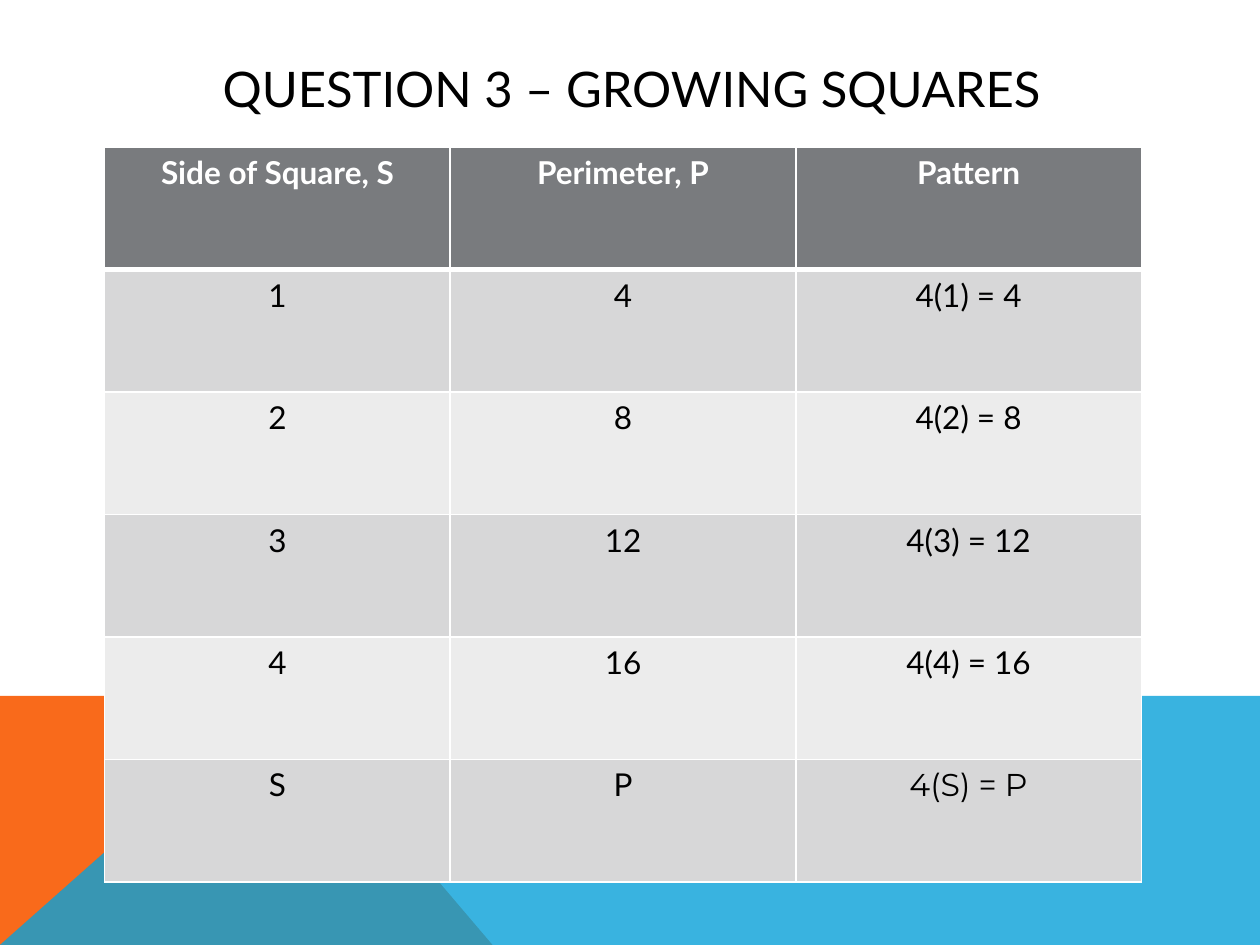
from lxml import etree
from pptx import Presentation
from pptx.dml.color import RGBColor
from pptx.enum.text import MSO_ANCHOR, PP_ALIGN
from pptx.oxml.ns import qn
from pptx.util import Cm, Pt

CENTER = PP_ALIGN.CENTER
MIDDLE = MSO_ANCHOR.MIDDLE

WHITE = RGBColor(0xFF, 0xFF, 0xFF)
BLACK = RGBColor(0x00, 0x00, 0x00)
ORANGE = RGBColor(0xF9, 0x6A, 0x1B)
BLUE = RGBColor(0x08, 0xA1, 0xD9)
HEADER_GRAY = RGBColor(0x79, 0x7B, 0x7E)
BAND_GRAYS = (RGBColor(0xD7, 0xD7, 0xD8), RGBColor(0xEC, 0xEC, 0xEC))

TITLE_FORMAT = {"name": "Lato", "size": Pt(28), "bold": False}
HEADER_FORMAT = {"name": "Lato", "size": Pt(18), "bold": True}
BODY_FORMAT = {"name": "Lato", "size": Pt(18), "bold": False}
FORMULA_FORMAT = {**BODY_FORMAT, "name": "Montserrat"}

HEADINGS = ("Side of Square, S", "Perimeter, P", "Pattern")
SQUARES = [(str(side), str(4 * side), f"4({side}) = {4 * side}") for side in range(1, 5)]
ROWS = [HEADINGS, *SQUARES, ("S", "P", "4(S) = P")]


def write_text(frame, text, formats, color):
    """Write one centred paragraph with the given font values."""
    para = frame.paragraphs[0]
    para.alignment = CENTER
    span = para.add_run()
    span.text = text
    for name, value in formats.items():
        setattr(span.font, name, value)
    span.font.color.rgb = color


def add_polygon(page, left, top, points, color, opacity=100):
    """Draw a filled polygon from points in cm relative to left and top."""
    corners = [(Cm(left + x), Cm(top + y)) for x, y in points]
    builder = page.shapes.build_freeform(*corners[0])
    builder.add_line_segments(corners[1:], close=True)
    shape = builder.convert_to_shape()
    shape.shadow.inherit = False
    shape.fill.solid()
    shape.fill.fore_color.rgb = color
    shape.line.fill.background()
    if opacity < 100:
        tint = shape.fill._xPr.find(f".//{qn('a:srgbClr')}")
        etree.SubElement(tint, qn("a:alpha"), val=str(opacity * 1000))


def add_footer_art(page, left, top, width, height):
    """Draw the orange and translucent blue shapes along the bottom."""
    peak = 5.66
    add_polygon(page, left, top, [(0, height), (0, 0), (peak, 0), (9.93, height)], ORANGE)
    add_polygon(page, left, top,
                [(0, height), (peak, 0), (width, 0), (width, height)], BLUE, 80)


def add_title(page, left, top, width, height):
    """Place the centred slide title."""
    box = page.shapes.add_textbox(Cm(left), Cm(top), Cm(width), Cm(height))
    box.text_frame.word_wrap = True
    box.text_frame.vertical_anchor = MIDDLE
    write_text(box.text_frame, "QUESTION 3 – GROWING SQUARES", TITLE_FORMAT, BLACK)


def set_borders(cell, top, bottom):
    """Give a cell white borders, with top and bottom widths in points."""
    properties = cell._tc.get_or_add_tcPr()
    widths = {"a:lnL": 1, "a:lnR": 1, "a:lnT": top, "a:lnB": bottom}
    for index, (tag, width) in enumerate(widths.items()):
        line = etree.Element(qn(tag), w=str(Pt(width)))
        fill = etree.SubElement(line, qn("a:solidFill"))
        etree.SubElement(fill, qn("a:srgbClr"), val=str(WHITE))
        properties.insert(index, line)


def add_squares_table(page, left, top, width, height):
    """Fill the table of sides, perimeters and patterns."""
    frame = page.shapes.add_table(len(ROWS), len(HEADINGS),
                                  Cm(left), Cm(top), Cm(width), Cm(height))
    table = frame.table
    for r, texts in enumerate(ROWS):
        for c, text in enumerate(texts):
            cell = table.cell(r, c)
            cell.fill.solid()
            cell.fill.fore_color.rgb = BAND_GRAYS[(r - 1) % 2] if r else HEADER_GRAY
            set_borders(cell, 3 if r == 1 else 1, 1 if r else 3)
            formats = BODY_FORMAT if r else HEADER_FORMAT
            if text == "4(S) = P":
                formats = FORMULA_FORMAT
            write_text(cell.text_frame, text, formats, BLACK if r else WHITE)


def main():
    """Build and save the slide."""
    deck = Presentation()
    deck.slide_width, deck.slide_height = Cm(25.4), Cm(19.05)
    page = deck.slides.add_slide(deck.slide_layouts[6])
    add_footer_art(page, 0, 14.03, 25.4, 5.02)
    add_title(page, 2.29, 1.02, 20.88, 1.52)
    add_squares_table(page, 2.11, 2.97, 20.9, 14.81)
    deck.save("out.pptx")


if __name__ == "__main__":
    main()
